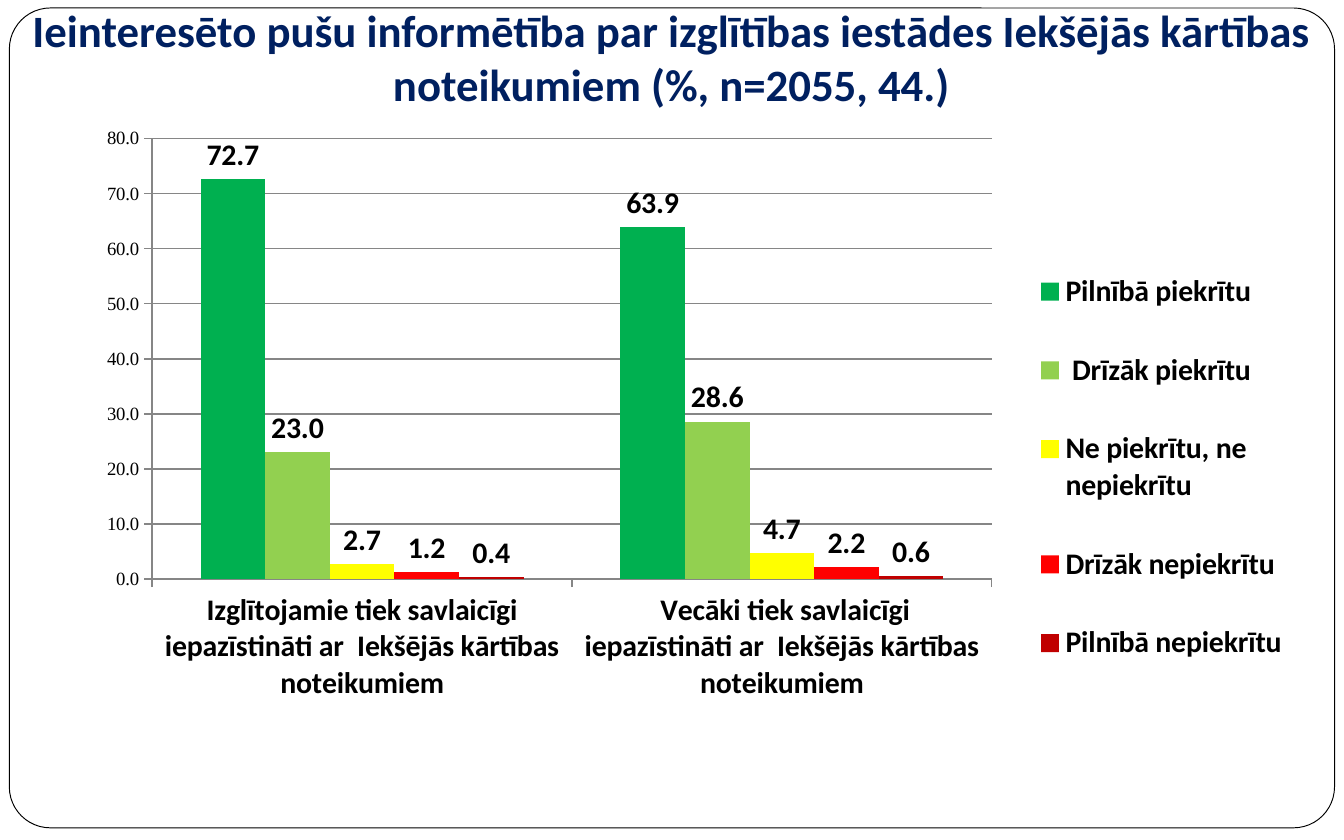
from dataclasses import dataclass

from lxml import etree
from pptx import Presentation
from pptx import util as u
from pptx.chart.data import CategoryChartData
from pptx.dml.color import RGBColor
from pptx.enum import chart as charts, shapes, text
from pptx.oxml import parse_xml
from pptx.oxml.ns import nsdecls, qn


@dataclass(frozen=True)
class Theme:
    """Colours, fonts and type sizes of the slide."""
    paper: str = "FFFFFF"
    ink: str = "000000"
    heading: str = "002060"
    rule: str = "868686"
    answers: tuple = ("00B050", "92D050", "FFFF00", "FF0000", "C00000")
    main_font: str = "Calibri"
    axis_font: str = "Times New Roman"
    title_size: int = 24
    label_size: int = 16
    axis_size: int = 10


THEME = Theme()
TITLE = ("Ieinteresēto pušu informētība par izglītības iestādes "
         "Iekšējās kārtības noteikumiem (%, n=2055, 44.)")
CATEGORIES = (
    "Izglītojamie tiek savlaicīgi iepazīstināti ar  Iekšējās kārtības noteikumiem",
    " Vecāki tiek savlaicīgi iepazīstināti ar  Iekšējās kārtības noteikumiem",
)
ANSWERS = {
    "Pilnībā piekrītu": (72.7, 63.9),
    " Drīzāk piekrītu": (23, 28.6),
    "Ne piekrītu, ne nepiekrītu": (2.7, 4.7),
    "Drīzāk nepiekrītu": (1.2, 2.2),
    "Pilnībā nepiekrītu": (0.4, 0.6),
}


def inches(box):
    """Turn a box of numbers into lengths."""
    return [u.Inches(value) for value in box]


def set_font(font, name, size, color, bold=False):
    """Format one font."""
    font.name, font.size, font.bold = name, u.Pt(size), bold
    font.color.rgb = RGBColor.from_string(color)


def set_label_font(font):
    """Give a font the bold style of the chart labels."""
    set_font(font, THEME.main_font, THEME.label_size, THEME.ink, True)


def set_line(line, color, width):
    """Format one line."""
    line.color.rgb = RGBColor.from_string(color)
    line.width = u.Pt(width)


def set_layout(element, box, inner=False):
    """Fix the place of a chart part as fractions of the chart."""
    for previous in element.findall(qn("c:layout")):
        element.remove(previous)
    layout = parse_xml(f"<c:layout {nsdecls('c')}><c:manualLayout/></c:layout>")
    settings = [("layoutTarget", "inner")] if inner else []
    settings += [("xMode", "edge"), ("yMode", "edge"), *zip("xywh", box)]
    for tag, value in settings:
        etree.SubElement(layout[0], qn(f"c:{tag}")).set("val", str(value))
    position = element.find(qn("c:legendPos"))
    element.insert(0 if position is None else 1, layout)


def add_frame(slide, box):
    """Place the rounded frame behind the slide content."""
    shape = slide.shapes.add_shape(shapes.MSO_SHAPE.ROUNDED_RECTANGLE, *inches(box))
    shape.adjustments[0] = 0.05
    shape.shadow.inherit = False
    shape.fill.solid()
    shape.fill.fore_color.rgb = RGBColor.from_string(THEME.paper)
    set_line(shape.line, THEME.ink, 0.5)
    slide.shapes._spTree.insert(2, shape._element)


def add_title(slide, box):
    """Move and format the title placeholder."""
    title = slide.shapes.title
    title.left, title.top, title.width, title.height = inches(box)
    frame = title.text_frame
    frame.word_wrap = True
    frame.auto_size = text.MSO_AUTO_SIZE.NONE
    frame.vertical_anchor = text.MSO_ANCHOR.BOTTOM
    frame.margin_left = frame.margin_right = frame.margin_bottom = u.Inches(0.1)
    frame.margin_top = u.Inches(0.05)
    paragraph = frame.paragraphs[0]
    paragraph.alignment = text.PP_ALIGN.CENTER
    paragraph.space_before, paragraph.space_after = u.Pt(0), u.Pt(10)
    properties = paragraph._p.get_or_add_pPr()
    properties.set("marL", str(u.Inches(0.5)))
    properties.set("indent", "0")
    run = paragraph.add_run()
    run.text = TITLE
    set_font(run.font, THEME.main_font, THEME.title_size, THEME.heading, True)


def format_axes(chart):
    """Format both axes and the gridlines."""
    for axis in (chart.category_axis, chart.value_axis):
        axis.major_tick_mark = charts.XL_TICK_MARK.OUTSIDE
        axis.minor_tick_mark = charts.XL_TICK_MARK.NONE
        set_line(axis.format.line, THEME.rule, 0.75)
    set_label_font(chart.category_axis.tick_labels.font)
    values = chart.value_axis
    values.minimum_scale, values.maximum_scale, values.major_unit = 0, 80, 10
    values.has_major_gridlines = True
    set_line(values.major_gridlines.format.line, THEME.rule, 0.75)
    values.tick_labels.number_format = "0.0"
    values.tick_labels.number_format_is_linked = False
    set_font(values.tick_labels.font, THEME.axis_font, THEME.axis_size, THEME.ink)


def format_series(series, color):
    """Colour one answer and show its values."""
    series.format.fill.solid()
    series.format.fill.fore_color.rgb = RGBColor.from_string(color)
    series.invert_if_negative = False
    labels = series.data_labels
    labels.show_value = True
    labels.number_format, labels.number_format_is_linked = "0.0", False
    labels.position = charts.XL_LABEL_POSITION.OUTSIDE_END
    set_label_font(labels.font)


def add_answer_chart(slide, box):
    """Place the column chart of answers with its legend."""
    data = CategoryChartData(number_format="0.0")
    data.categories = CATEGORIES
    for name, values in ANSWERS.items():
        data.add_series(name, values)
    kind = charts.XL_CHART_TYPE.COLUMN_CLUSTERED
    chart = slide.shapes.add_chart(kind, *inches(box), data).chart
    chart.has_title = False
    set_font(chart.font, THEME.axis_font, THEME.axis_size, THEME.ink)
    plot = chart.plots[0]
    plot.gap_width, plot.overlap, plot.vary_by_categories = 150, 0, False
    for series, color in zip(plot.series, THEME.answers):
        format_series(series, color)
    format_axes(chart)
    chart.has_legend = True
    chart.legend.position = charts.XL_LEGEND_POSITION.RIGHT
    chart.legend.include_in_layout = False
    set_label_font(chart.legend.font)
    set_layout(chart.legend._element, (0.68, 0.15, 0.19, 0.66))
    plot_area = chart._chartSpace.chart.plotArea
    set_layout(plot_area, (0.079, 0.021, 0.579, 0.615), inner=True)


def main():
    """Build and save the presentation."""
    presentation = Presentation()
    presentation.slide_width, presentation.slide_height = inches((10, 6.25))
    slide = presentation.slides.add_slide(presentation.slide_layouts[5])
    add_frame(slide, (0.07, 0.06, 9.86, 6.1))
    add_title(slide, (-0.51, 0.13, 10.51, 0.79))
    add_answer_chart(slide, (0.28, 0.92, 10.79, 5.33))
    presentation.save("out.pptx")


if __name__ == "__main__":
    main()
